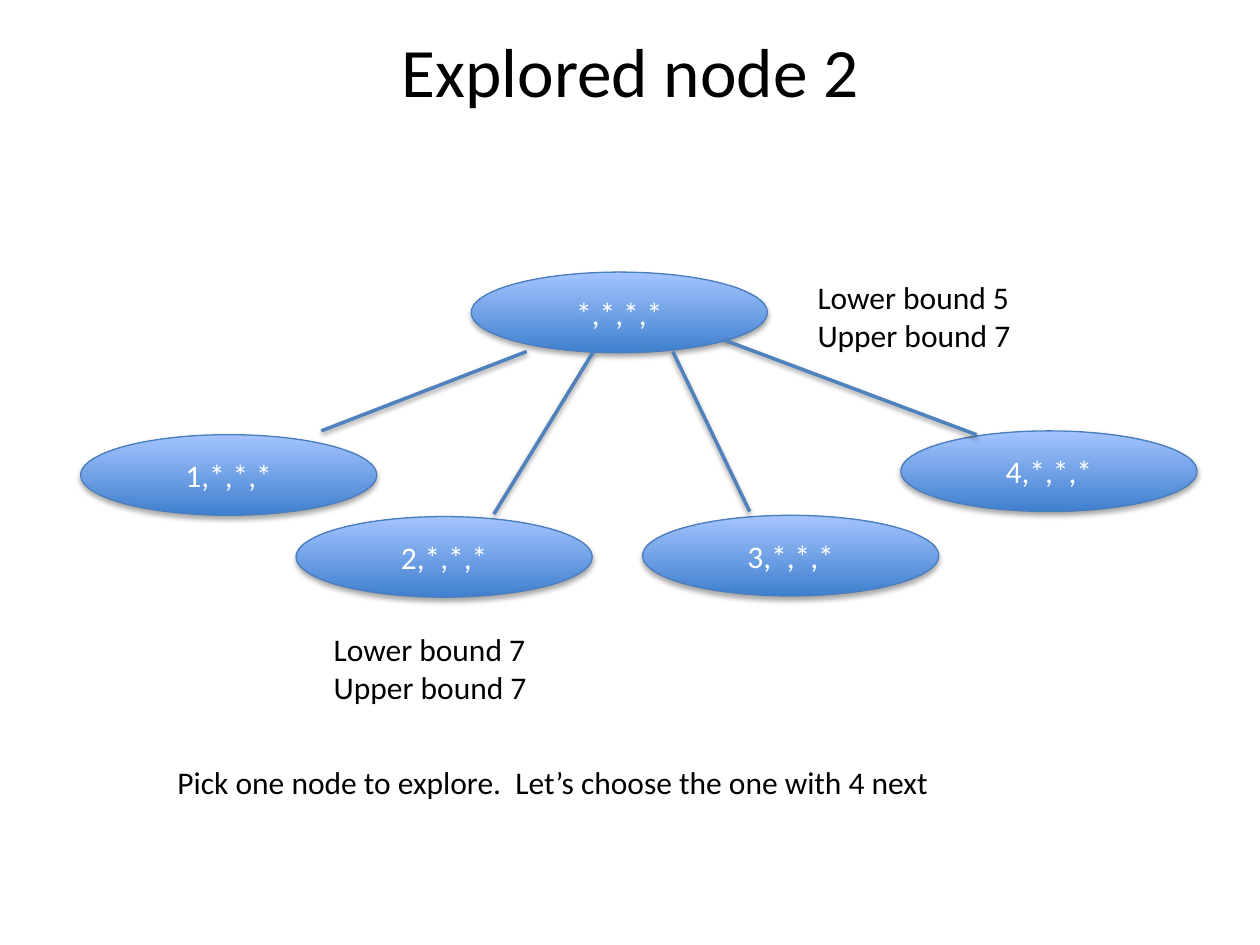
from lxml import etree
from pptx import Presentation, util as u
from pptx.dml.color import RGBColor
from pptx.enum import shapes, text
from pptx.oxml import ns

BLACK = RGBColor(0x00, 0x00, 0x00)
WHITE = RGBColor(0xFF, 0xFF, 0xFF)
NODE_BOTTOM = RGBColor(0x3F, 0x80, 0xCE)
NODE_TOP = RGBColor(0xA4, 0xC4, 0xFF)
NODE_LINE = RGBColor(0x4B, 0x7E, 0xBC)
EDGE = RGBColor(0x4F, 0x81, 0xBD)

CELL = u.Inches(0.1)  # the slide is a grid of square cells
COLUMNS, ROWS = 100, 75
NODE_SIZE = (23.5, 6.4)

# Columns and rows from the corner of the tree
NODES = {
    "*,*,*,*": (31, 0),
    "3,*,*,*": (44.6, 19.3),
    "4,*,*,*": (65.1, 12.6),
    "2,*,*,*": (17.1, 19.4),
    "1,*,*,*": (0, 12.9),
}
EDGES = [
    ((35.4, 6.3), (19.1, 12.6)),
    ((40.7, 6.3), (32.8, 19.2)),
    ((47, 6.3), (53.1, 19)),
    ((51.1, 5.4), (71.1, 12.9)),
]


def cells(*lengths):
    return [round(length * CELL) for length in lengths]


def write(shape, lines, size=18, color=BLACK, align=text.PP_ALIGN.LEFT,
          anchor=text.MSO_ANCHOR.TOP, wrap=True, spacing=1.0):
    """Write one paragraph per line; a vertical tab breaks within one."""
    frame = shape.text_frame
    frame.word_wrap = wrap
    frame.vertical_anchor = anchor
    frame.text = "\n".join(lines)
    for paragraph in frame.paragraphs:
        paragraph.alignment = align
        paragraph.line_spacing = spacing
        font = paragraph.font
        font.name, font.size = "Calibri", u.Pt(size)
        font.color.rgb = color
        for run in paragraph.runs:
            run.font.name, run.font.size = "Calibri", u.Pt(size)
            run.font.color.rgb = color


def add_shadow(shape, distance, opacity):
    properties = shape._element.spPr
    effects = properties.find(ns.qn("a:effectLst"))
    if effects is None:
        effects = etree.SubElement(properties, ns.qn("a:effectLst"))
    shadow = etree.SubElement(
        effects, ns.qn("a:outerShdw"), blurRad=str(u.Pt(3.1)),
        dist=str(u.Pt(distance)), dir="5400000", rotWithShape="0")
    color = etree.SubElement(shadow, ns.qn("a:srgbClr"), val=str(BLACK))
    etree.SubElement(color, ns.qn("a:alpha"), val=str(opacity * 1000))


def add_title(slide, left, top, width, height):
    title = slide.shapes.title
    title.left, title.top, title.width, title.height = cells(left, top, width, height)
    write(title, ["Explored node 2\v"], size=39.6, align=text.PP_ALIGN.CENTER,
          anchor=text.MSO_ANCHOR.MIDDLE, spacing=0.9)


def add_node(slide, label, left, top):
    node = slide.shapes.add_shape(shapes.MSO_SHAPE.OVAL, *cells(left, top, *NODE_SIZE))
    node.fill.gradient()
    node.fill.gradient_angle = 90
    for stop, color in zip(node.fill.gradient_stops, (NODE_BOTTOM, NODE_TOP)):
        stop.color.rgb = color
    node.line.color.rgb = NODE_LINE
    node.line.width = u.Pt(0.75)
    node.shadow.inherit = False
    add_shadow(node, distance=1.8, opacity=35)
    write(node, [label], color=WHITE, align=text.PP_ALIGN.CENTER,
          anchor=text.MSO_ANCHOR.MIDDLE)


def add_edge(slide, start, end):
    edge = slide.shapes.add_connector(
        shapes.MSO_CONNECTOR.STRAIGHT, *cells(*start, *end))
    edge.line.color.rgb = EDGE
    edge.line.width = u.Pt(2)
    add_shadow(edge, distance=1.6, opacity=38)


def add_tree(slide, left, top):
    for label, (column, row) in NODES.items():
        add_node(slide, label, left + column, top + row)
    for ends in EDGES:
        add_edge(slide, *[(left + column, top + row) for column, row in ends])


def add_note(slide, lines, left, top, width, height):
    note = slide.shapes.add_textbox(*cells(left, top, width, height))
    write(note, lines, wrap=False)
    note.text_frame.auto_size = text.MSO_AUTO_SIZE.SHAPE_TO_FIT_TEXT


def add_bounds(slide, lower, upper, left, top):
    add_note(slide, [f"Lower bound {lower}", f"Upper bound {upper}"],
             left, top, 17.4, 7.1)


def main():
    presentation = Presentation()
    presentation.slide_width, presentation.slide_height = cells(COLUMNS, ROWS)
    slide = presentation.slides.add_slide(
        presentation.slide_layouts.get_by_name("Title Only"))
    add_title(slide, 5, 3, 90, 12.5)
    add_tree(slide, 6.4, 21.6)
    add_bounds(slide, 5, 7, 63.9, 21.6)
    add_note(slide, ["Pick one node to explore.  Let’s choose the one with 4 next"],
             13.1, 60.1, 62.5, 4)
    add_bounds(slide, 7, 7, 25.5, 49.5)
    presentation.save("out.pptx")


if __name__ == "__main__":
    main()
